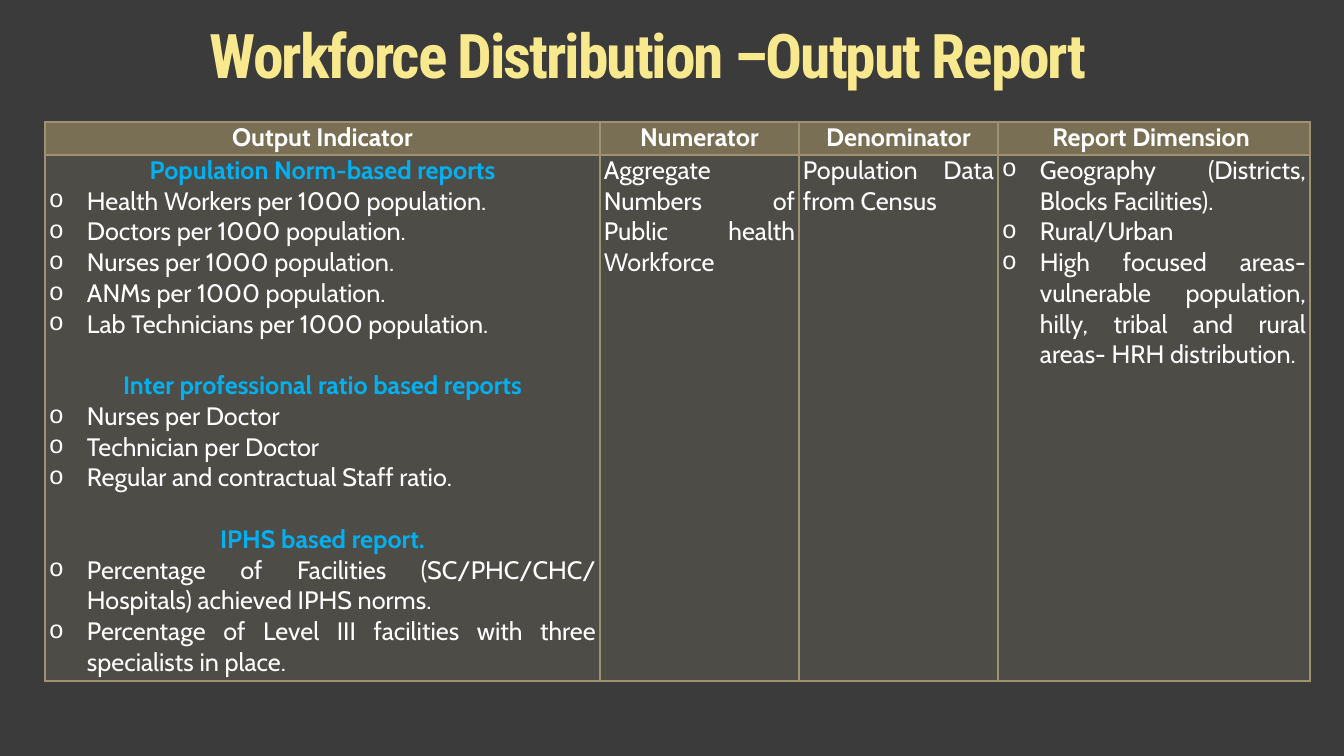
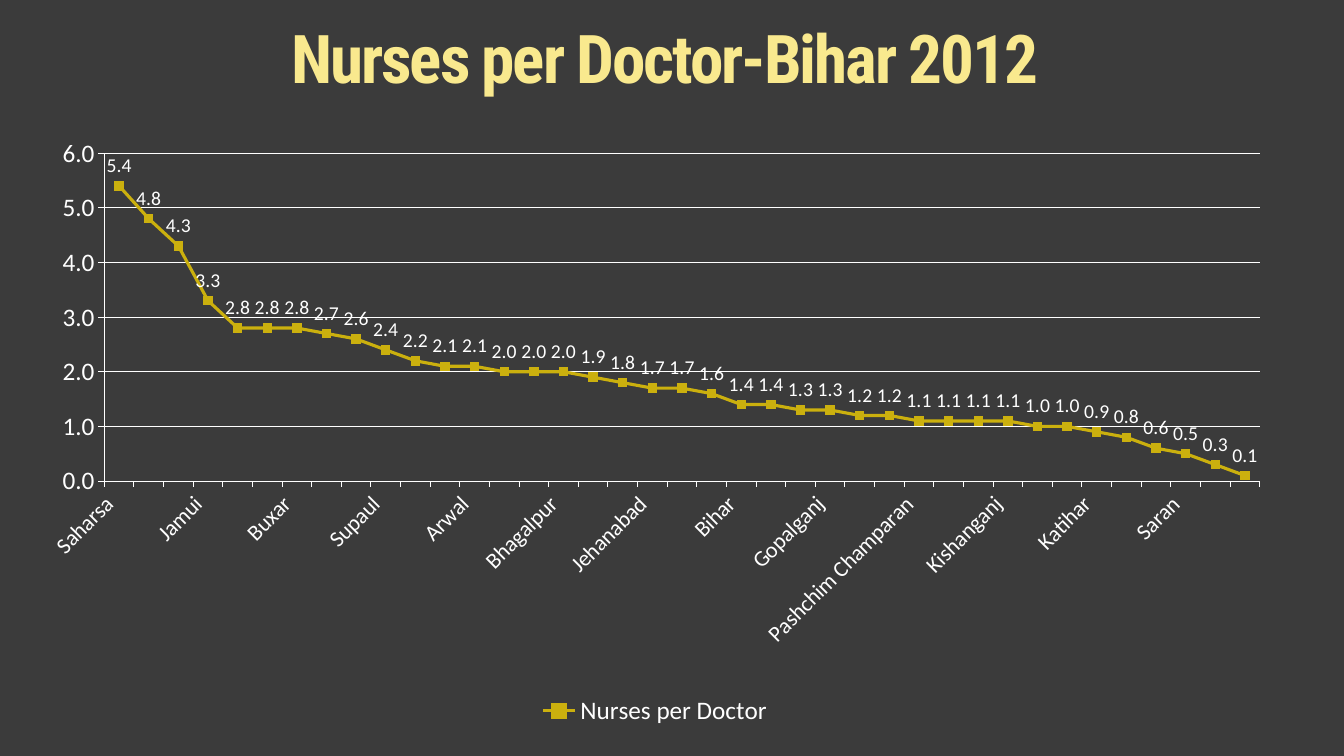
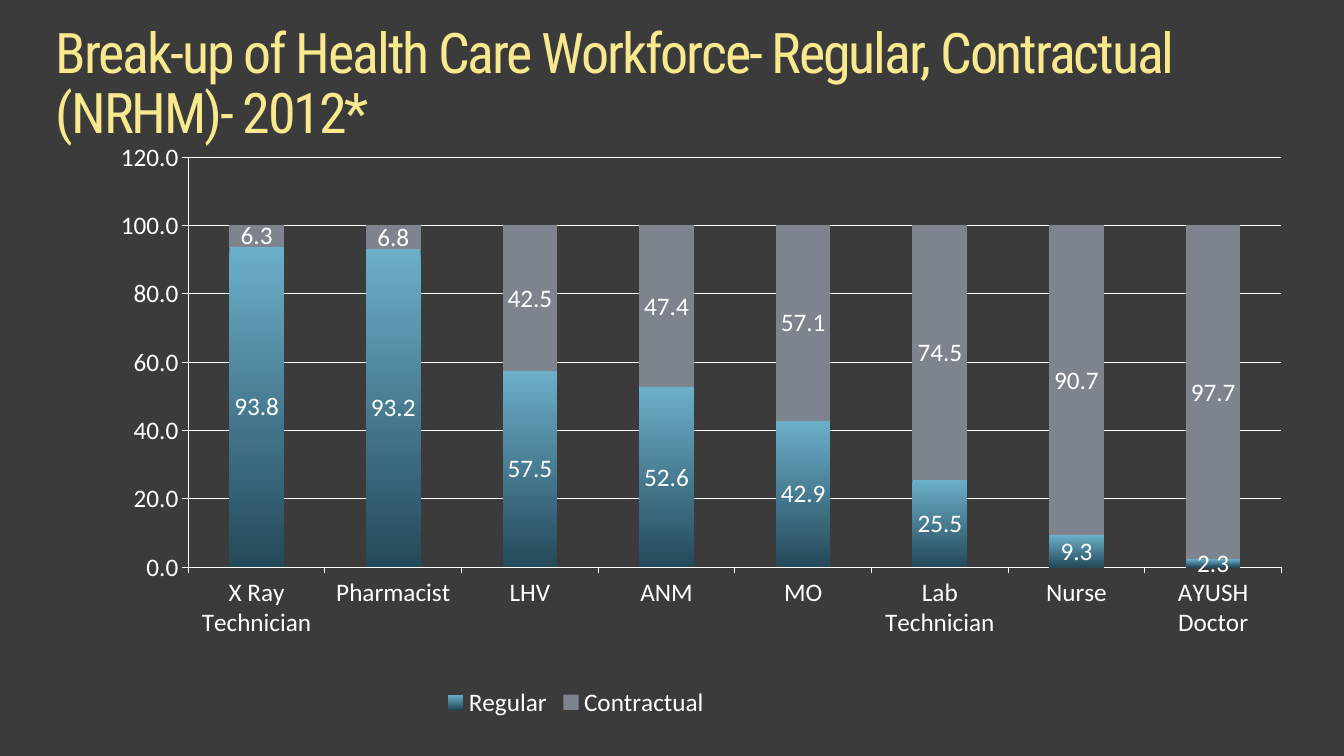
from lxml import etree
from pptx import Presentation, util as u
from pptx.chart.data import CategoryChartData
from pptx.dml.color import RGBColor
from pptx.enum import chart as ch, text
from pptx.oxml.ns import qn

PX = 914400 / 100.8
BG, GOLD, WHITE, BLUE = "3B3B3B", "F9E98E", "FFFFFF", "00B0F0"
HEAD, RULE, LINE = "796F54", "9E9273", "CBB00E"
LIGHT, DARK, GREY = "6BAFC9", "24495A", "7E848D"
AL = text.PP_ALIGN

HEADERS = ["Output Indicator", "Numerator", "Denominator", "Report Dimension "]
# "#" starts a heading, "o" a bullet
BODY = [
    ["# Population Norm-based reports",
     "o Health Workers per 1000 population.",
     "o Doctors per 1000 population.",
     "o Nurses per 1000 population.",
     "o ANMs per 1000 population.",
     "o Lab Technicians per 1000 population.",
     "# Inter professional ratio based reports",
     "o Nurses per Doctor",
     "o Technician per Doctor",
     "o Regular and contractual Staff ratio.",
     "# IPHS based report.",
     "o Percentage of Facilities (SC/PHC/CHC/ Hospitals) achieved IPHS norms.",
     "o Percentage of Level III facilities with three specialists in place."],
    ["Aggregate Numbers of Public health Workforce"],
    ["Population Data from Census"],
    ["o Geography (Districts, Blocks Facilities).",
     "o Rural/Urban",
     "o High focused areas- vulnerable population, hilly, tribal and rural "
     "areas- HRH distribution."],
]
DISTRICTS = (
    "Saharsa,Kaimur (Bhabua),Banka,Jamui,Purnia,Nalanda,Buxar,Sitamarhi,Vaishali,"
    "Supaul,Munger,Madhepura,Arwal,Khagaria,Araria,Bhagalpur,Sheohar,Begusarai,"
    "Jehanabad,Gaya,Sheikhpura,Bihar,Aurangabad,Purba Champaran,Gopalganj,Siwan,"
    "Madhubani,Pashchim Champaran,Samastipur,Bhojpur,Kishanganj,Rohtas,Nawada,"
    "Katihar,Darbhanga,Muzaffarpur,Saran,Lakhisarai,Patna").split(",")
RATIOS = [5.4, 4.8, 4.3, 3.3, 2.8, 2.8, 2.8, 2.7, 2.6, 2.4, 2.2, 2.1, 2.1,
          2, 2, 2, 1.9, 1.8, 1.7, 1.7, 1.6, 1.4, 1.4, 1.3, 1.3, 1.2, 1.2,
          1.1, 1.1, 1.1, 1.1, 1, 1, 0.9, 0.8, 0.6, 0.5, 0.3, 0.1]
CADRES = ["X Ray Technician", "Pharmacist", "LHV", "ANM", "MO",
          "Lab Technician", "Nurse", "AYUSH Doctor"]
REGULAR = [93.8, 93.2, 57.5, 52.6, 42.9, 25.5, 9.3, 2.3]
CONTRACTUAL = [6.3, 6.8, 42.5, 47.4, 57.1, 74.5, 90.7, 97.7]


def px(n):
    return u.Emu(round(n * PX))


def rgb(c):
    return RGBColor.from_string(c)


def put(obj, **values):
    for name, value in values.items():
        setattr(obj, name, value)


def style(font, size, color=WHITE, name="Calibri", bold=False):
    put(font, size=u.Pt(size), name=name, bold=bold)
    font.color.rgb = rgb(color)


def add_slide(prs, title, box, size, bold=True, align=AL.CENTER):
    s = prs.slides.add_slide(prs.slide_layouts[5])
    sp = s.shapes.title
    put(sp, **dict(zip(("left", "top", "width", "height"), map(px, box))))
    tf = sp.text_frame
    put(tf, margin_left=0, margin_top=0, margin_right=0, margin_bottom=0,
        word_wrap=True, auto_size=text.MSO_AUTO_SIZE.NONE,
        vertical_anchor=text.MSO_ANCHOR.TOP)
    p = tf.paragraphs[0]
    put(p, alignment=align, line_spacing=0.9)
    r = p.add_run()
    r.text = title
    style(r.font, size, GOLD, "Roboto Condensed", bold)
    r.font._element.set("spc", "-150")
    return s


def add_bullet(p):
    pPr = p._p.get_or_add_pPr()
    pPr.set("marL", str(px(38)))
    pPr.set("indent", str(-px(38)))
    etree.SubElement(pPr, qn("a:buFont")).set("typeface", "Courier New")
    etree.SubElement(pPr, qn("a:buChar")).set("char", "o")


def paint_cell(cell, color, alpha=None):
    put(cell, margin_left=px(4), margin_right=px(4), margin_top=0, margin_bottom=0)
    cell.fill.solid()
    cell.fill.fore_color.rgb = rgb(color)
    tcPr = cell._tc.get_or_add_tcPr()
    if alpha:
        clr = tcPr.find(".//" + qn("a:srgbClr"))
        etree.SubElement(clr, qn("a:alpha")).set("val", str(alpha * 1000))
    for i, (side, pt) in enumerate([("L", 1), ("R", 1), ("T", 1), ("B", 2)]):
        ln = etree.Element(qn("a:ln" + side), w=str(u.Pt(pt)))
        fill = etree.SubElement(ln, qn("a:solidFill"))
        etree.SubElement(fill, qn("a:srgbClr")).set("val", RULE)
        tcPr.insert(i, ln)


def fill_cell(cell, lines, align=AL.JUSTIFY, bold=False):
    tf = cell.text_frame
    for i, line in enumerate(lines):
        p = tf.add_paragraph() if i else tf.paragraphs[0]
        heading, bullet = line.startswith("# "), line.startswith("o ")
        p.alignment = AL.CENTER if heading else align
        if heading and i:
            p.space_before = u.Pt(22)
        if bullet:
            add_bullet(p)
        r = p.add_run()
        r.text = line[2:] if heading or bullet else line
        style(r.font, 18, BLUE if heading else WHITE, "Cabin", bold or heading)


def add_indicator_table(s, x, y, widths, heights):
    tbl = s.shapes.add_table(2, len(widths), px(x), px(y), px(sum(widths)),
                             px(sum(heights))).table
    put(tbl, first_row=False, horz_banding=False)
    for row, h in zip(tbl.rows, heights):
        row.height = px(h)
    for c, w in enumerate(widths):
        tbl.columns[c].width = px(w)
        head, body = tbl.cell(0, c), tbl.cell(1, c)
        fill_cell(head, [HEADERS[c]], AL.CENTER, True)
        fill_cell(body, BODY[c])
        paint_cell(head, HEAD)
        paint_cell(body, RULE, 20)


def set_layout(parent, index, **values):
    """Give a chart part a fixed place, in fractions of the chart."""
    for old in parent.findall(qn("c:layout")):
        parent.remove(old)
    layout = etree.Element(qn("c:layout"))
    manual = etree.SubElement(layout, qn("c:manualLayout"))
    for name, value in values.items():
        etree.SubElement(manual, qn("c:" + name)).set("val", str(value))
    parent.insert(index, layout)


def add_chart(s, kind, box, plot_box, cats, series, top, step, label_size=18):
    """Add a chart whose plot area fills plot_box, both boxes in slide px."""
    data = CategoryChartData(number_format="0.0")
    data.categories = cats
    for name, values in series:
        data.add_series(name, values)
    chart = s.shapes.add_chart(kind, *map(px, box), data).chart
    put(chart, has_title=False, has_legend=True)
    style(chart.font, 18)
    put(chart.legend, position=ch.XL_LEGEND_POSITION.BOTTOM, include_in_layout=False)
    style(chart.legend.font, 18)
    x, y, w, h = box
    px0, py0, pw, ph = plot_box
    set_layout(chart._chartSpace.find(".//" + qn("c:plotArea")), 0,
               layoutTarget="inner", xMode="edge", yMode="edge",
               x=round((px0 - x) / w, 3), y=round((py0 - y) / h, 3),
               w=round(pw / w, 3), h=round(ph / h, 3))
    val = chart.value_axis
    put(val, minimum_scale=0, maximum_scale=top, major_unit=step,
        has_major_gridlines=True)
    put(val.tick_labels, number_format="0.0", number_format_is_linked=False)
    for axis in (val, chart.category_axis):
        axis.major_tick_mark = ch.XL_TICK_MARK.OUTSIDE
        style(axis.tick_labels.font, 18)
    for part in (val, chart.category_axis, val.major_gridlines):
        part.format.line.color.rgb = rgb(WHITE)
        part.format.line.width = u.Pt(0.75)
    plot = chart.plots[0]
    put(plot, vary_by_categories=False, has_data_labels=True)
    put(plot.data_labels, show_value=True, number_format="0.0",
        number_format_is_linked=False)
    style(plot.data_labels.font, label_size)
    return chart


def add_nurse_chart(s, box, plot_box):
    chart = add_chart(s, ch.XL_CHART_TYPE.LINE_MARKERS, box, plot_box,
                      [d + "\n" for d in DISTRICTS],
                      [("Nurses per Doctor", RATIOS)], 6, 1, 14)
    plot = chart.plots[0]
    plot.data_labels.position = ch.XL_LABEL_POSITION.ABOVE
    axis = chart.category_axis
    axis.tick_labels.font.size = u.Pt(16)
    axis._element.find(".//" + qn("a:bodyPr")).set("rot", "-2700000")
    ser = plot.series[0]
    ser.smooth = False
    ser.format.line.color.rgb = rgb(LINE)
    ser.format.line.width = u.Pt(2.25)
    put(ser.marker, style=ch.XL_MARKER_STYLE.SQUARE, size=6)
    ser.marker.format.fill.solid()
    ser.marker.format.fill.fore_color.rgb = rgb(LINE)
    ser.marker.format.line.color.rgb = rgb(LINE)


def add_workforce_chart(s, box, plot_box):
    chart = add_chart(s, ch.XL_CHART_TYPE.COLUMN_STACKED, box, plot_box, CADRES,
                      [("Regular", REGULAR), ("Contractual", CONTRACTUAL)], 120, 20)
    set_layout(chart.legend._element, 1, xMode="edge", yMode="edge", x=0.29, y=0.92)
    plot = chart.plots[0]
    put(plot, gap_width=150, overlap=100)
    regular, contractual = (ser.format.fill for ser in plot.series)
    regular.gradient()
    regular.gradient_angle = 270
    for stop, color in zip(regular.gradient_stops, (LIGHT, DARK)):
        stop.color.rgb = rgb(color)
    contractual.solid()
    contractual.fore_color.rgb = rgb(GREY)


def main():
    prs = Presentation()
    put(prs, slide_width=px(1344), slide_height=px(756))
    bg = prs.slide_master.background.fill
    bg.solid()
    bg.fore_color.rgb = rgb(BG)

    s = add_slide(prs, "Workforce Distribution –Output Report ", (33, 25, 1243, 101), 44)
    add_indicator_table(s, 45, 122, (555, 199, 199, 312), (33, 526))

    s = add_slide(prs, "Nurses per Doctor-Bihar 2012 ", (56, 25, 1231, 74), 48)
    add_nurse_chart(s, (25, 126, 1260, 605), (104, 153, 1156, 328))

    s = add_slide(prs, "Break-up of Health Care Workforce- Regular, Contractual (NRHM)- 2012*",
                  (56, 25, 1231, 84), 40, False, AL.LEFT)
    add_workforce_chart(s, (84, 118, 1227, 613), (188, 157, 1093, 410))
    prs.save("out.pptx")


if __name__ == "__main__":
    main()
